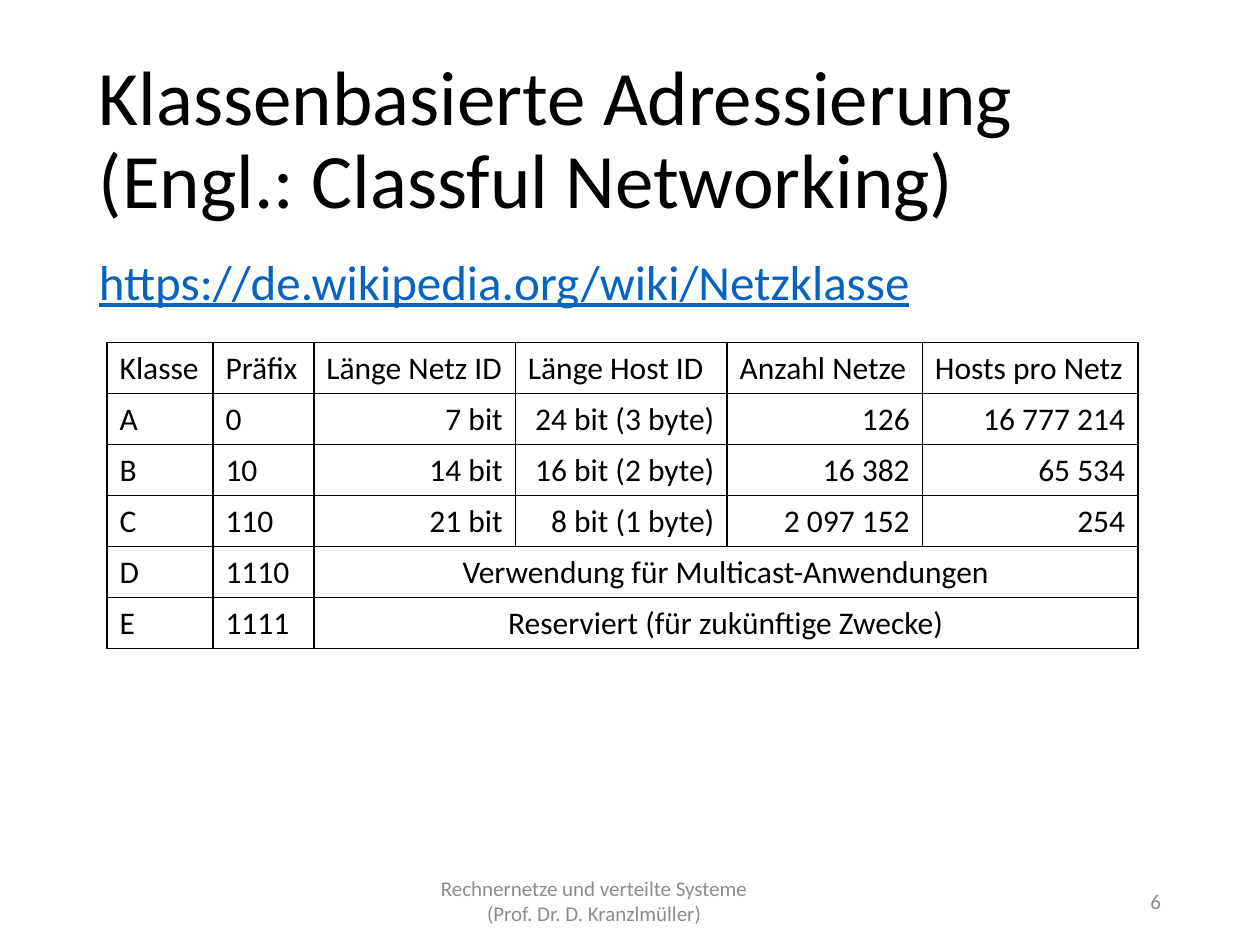
from lxml import etree
from pptx import Presentation
from pptx.dml.color import RGBColor
from pptx.enum import text as t
from pptx.oxml import ns
from pptx.util import Pt

BLACK = RGBColor(0x00, 0x00, 0x00)
GREY = RGBColor(0x8C, 0x8C, 0x8C)
LINK_BLUE = RGBColor(0x05, 0x63, 0xC1)
LEFT, CENTER, RIGHT = t.PP_ALIGN.LEFT, t.PP_ALIGN.CENTER, t.PP_ALIGN.RIGHT

COLUMN_WIDTHS = [60.5, 57.6, 115.2, 121, 111.6, 123.1]
ROW_HEIGHT = 29.16
ADDRESS_CLASSES = [
    ["Klasse", "Präfix", "Länge Netz ID", "Länge Host ID", "Anzahl Netze", "Hosts pro Netz"],
    ["A", "0", "7 bit", "24 bit (3 byte)", "126", "16 777 214"],
    ["B", "10", "14 bit", "16 bit (2 byte)", "16 382", "65 534"],
    ["C", "110", "21 bit", "8 bit (1 byte)", "2 097 152", "254"],
    ["D", "1110", "Verwendung für Multicast-Anwendungen"],
    ["E", "1111", "Reserviert (für zukünftige Zwecke)"],
]


def write(paragraph, words, size=18, color=BLACK, align=LEFT, spacing=None,
          underline=None, right_indent=0):
    """Fill a paragraph with formatted text; a vertical tab breaks the line."""
    paragraph.text = words
    paragraph.alignment = align
    if spacing:
        paragraph.line_spacing = spacing
    if right_indent:
        paragraph._p.get_or_add_pPr().set("marR", str(Pt(right_indent)))
    for run in paragraph.runs:
        run.font.name = "Calibri"
        run.font.size = Pt(size)
        run.font.color.rgb = color
        run.font.underline = underline


def add_box(slide, left, top, width, height, anchor=t.MSO_ANCHOR.MIDDLE):
    """Add a wrapping text box and return its text frame."""
    frame = slide.shapes.add_textbox(Pt(left), Pt(top), Pt(width), Pt(height)).text_frame
    frame.word_wrap = True
    frame.vertical_anchor = anchor
    return frame


def outline(cell):
    """Give a cell thin black borders and no fill."""
    properties = cell._tc.get_or_add_tcPr()
    for side in ("a:lnL", "a:lnR", "a:lnT", "a:lnB"):
        line = etree.SubElement(properties, ns.qn(side), w=str(Pt(1)))
        fill = etree.SubElement(line, ns.qn("a:solidFill"))
        etree.SubElement(fill, ns.qn("a:srgbClr"), val=str(BLACK))
    cell.fill.background()


def add_class_table(slide, left, top):
    """Add the table of address classes; short rows span the remaining columns."""
    row_count, column_count = len(ADDRESS_CLASSES), len(COLUMN_WIDTHS)
    table = slide.shapes.add_table(row_count, column_count, Pt(left), Pt(top),
                                   Pt(sum(COLUMN_WIDTHS)), Pt(ROW_HEIGHT * row_count)).table
    table.first_row = table.horz_banding = False
    for column, width in zip(table.columns, COLUMN_WIDTHS):
        column.width = Pt(width)
    for row in table.rows:
        row.height = Pt(ROW_HEIGHT)
    for cell in table.iter_cells():
        outline(cell)
    for r, entries in enumerate(ADDRESS_CLASSES):
        spans = len(entries) < column_count
        if spans:
            table.cell(r, len(entries) - 1).merge(table.cell(r, column_count - 1))
        for c, entry in enumerate(entries):
            align = LEFT if r == 0 or c < 2 else CENTER if spans else RIGHT
            write(table.cell(r, c).text_frame.paragraphs[0], entry, align=align)


def main():
    """Build the slide on classful addressing."""
    deck = Presentation()
    deck.slide_width, deck.slide_height = Pt(720), Pt(540)
    slide = deck.slides.add_slide(deck.slide_layouts[6])

    title = add_box(slide, 49.5, 28.75, 621, 104.4)
    write(title.paragraphs[0], "Klassenbasierte Adressierung\v(Engl.: Classful Networking)",
          size=44, spacing=0.9)

    source = add_box(slide, 49.5, 143.75, 621, 342.6, anchor=t.MSO_ANCHOR.TOP)
    write(source.paragraphs[0], "https://de.wikipedia.org/wiki/Netzklasse",
          size=28, color=LINK_BLUE, spacing=0.9, underline=True)

    add_class_table(slide, 61.2, 195.84)

    footer = add_box(slide, 238.5, 500.5, 243, 28.75)
    write(footer.paragraphs[0], "Rechnernetze und verteilte Systeme",
          size=12, color=GREY, align=CENTER, right_indent=41)
    write(footer.add_paragraph(), "(Prof. Dr. D. Kranzlmüller)",
          size=12, color=GREY, align=CENTER)

    page_number = add_box(slide, 508.5, 500.5, 162, 28.75)
    write(page_number.paragraphs[0], "6", size=12, color=GREY, align=RIGHT)

    deck.save("out.pptx")


if __name__ == "__main__":
    main()
